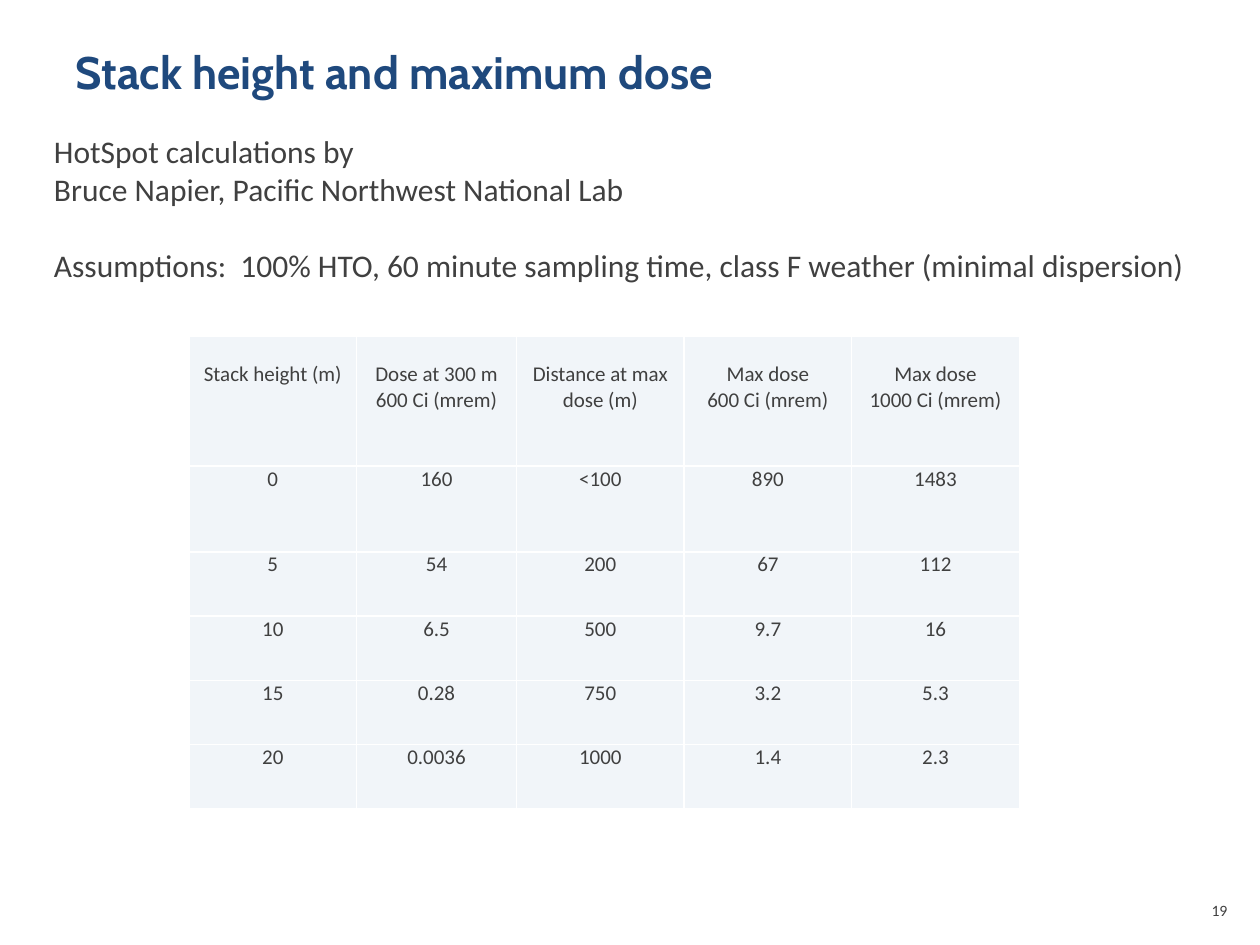
from lxml.etree import SubElement
from pptx import Presentation
from pptx.dml.color import RGBColor
from pptx.enum.text import MSO_ANCHOR, MSO_AUTO_SIZE, PP_ALIGN
from pptx.oxml.ns import qn
from pptx.util import Inches, Pt

NAVY, GREY, PALE, WHITE = "1F497D", "404040", "F1F5F9", "FFFFFF"
COLUMN_WIDTHS = [1.33, 1.27, 1.33, 1.33, 1.33]
ROW_HEIGHTS = [1.03, 0.68] + [0.51] * 4
DOSE_ROWS = [
    ["Stack height (m)", "Dose at 300 m\n600 Ci (mrem)", "Distance at max dose (m)",
     "Max dose\n600 Ci (mrem)", "Max dose\n1000 Ci (mrem)"],
    ["0", "160", "<100", "890", "1483"],
    ["5", "54", "200", "67", "112"],
    ["10", "6.5", "500", "9.7", "16"],
    ["15", "0.28", "750", "3.2", "5.3"],
    ["20", "0.0036", "1000", "1.4", "2.3"],
]
ASSUMPTIONS = "\n".join([
    "HotSpot calculations by",
    "Bruce Napier, Pacific Northwest National Lab",
    "Assumptions:  100% HTO, 60 minute sampling time, class F weather (minimal dispersion)",
])


def color(value):
    return RGBColor.from_string(value)


def write(frame, text, size, align=PP_ALIGN.LEFT, font="Calibri", fill=GREY, bold=False):
    """Fill a text frame, one paragraph per line of text."""
    frame.text = text
    for paragraph in frame.paragraphs:
        paragraph.alignment = align
        for span in paragraph.runs:
            span.font.name = font
            span.font.size = Pt(size)
            span.font.bold = bold
            span.font.color.rgb = color(fill)


def set_title(page, text):
    title = page.shapes.title
    title.left, title.top = Inches(0.5), Inches(0.3)
    title.width, title.height = Inches(9), Inches(1.25)
    frame = title.text_frame
    frame.vertical_anchor = MSO_ANCHOR.TOP
    frame.auto_size = MSO_AUTO_SIZE.NONE
    write(frame, text, 26, font="Cabin", fill=NAVY, bold=True)


def add_text(page, left, top, width, height, text, size, align=PP_ALIGN.LEFT):
    box = page.shapes.add_textbox(Inches(left), Inches(top), Inches(width), Inches(height))
    box.text_frame.word_wrap = True
    write(box.text_frame, text, size, align)
    return box


def add_borders(cell, value, width):
    properties = cell._tc.get_or_add_tcPr()
    for index, side in enumerate(("a:lnL", "a:lnR", "a:lnT", "a:lnB")):
        line = properties.makeelement(qn(side), {"w": str(Pt(width))})
        fill = SubElement(line, qn("a:solidFill"))
        SubElement(fill, qn("a:srgbClr"), val=value)
        properties.insert(index, line)


def add_dose_table(page, left, top):
    frame = page.shapes.add_table(
        len(DOSE_ROWS), len(COLUMN_WIDTHS), Inches(left), Inches(top),
        Inches(sum(COLUMN_WIDTHS)), Inches(sum(ROW_HEIGHTS)))
    table = frame.table
    table.first_row = table.horz_banding = False
    for column, width in zip(table.columns, COLUMN_WIDTHS):
        column.width = Inches(width)
    for row, height in zip(table.rows, ROW_HEIGHTS):
        row.height = Inches(height)
    for row_index, values in enumerate(DOSE_ROWS):
        for column_index, value in enumerate(values):
            cell = table.cell(row_index, column_index)
            cell.margin_left = cell.margin_right = cell.margin_bottom = 0
            cell.margin_top = Inches(0.2 if row_index == 0 else 0)
            cell.fill.solid()
            cell.fill.fore_color.rgb = color(PALE)
            add_borders(cell, WHITE, 1)
            write(cell.text_frame, value, 12, PP_ALIGN.CENTER)


def main():
    deck = Presentation()
    deck.slide_width, deck.slide_height = Inches(10), Inches(7.5)
    page = deck.slides.add_slide(deck.slide_layouts[5])
    set_title(page, "Stack height and maximum dose")
    add_text(page, 9.42, 7.1, 0.42, 0.4, "19", 9, PP_ALIGN.RIGHT)
    add_dose_table(page, 1.5, 2.67)
    notes = add_text(page, 0.33, 1, 9.42, 1.31, ASSUMPTIONS, 18)
    notes.text_frame.paragraphs[-1].space_before = Pt(22)
    deck.save("out.pptx")


if __name__ == "__main__":
    main()
